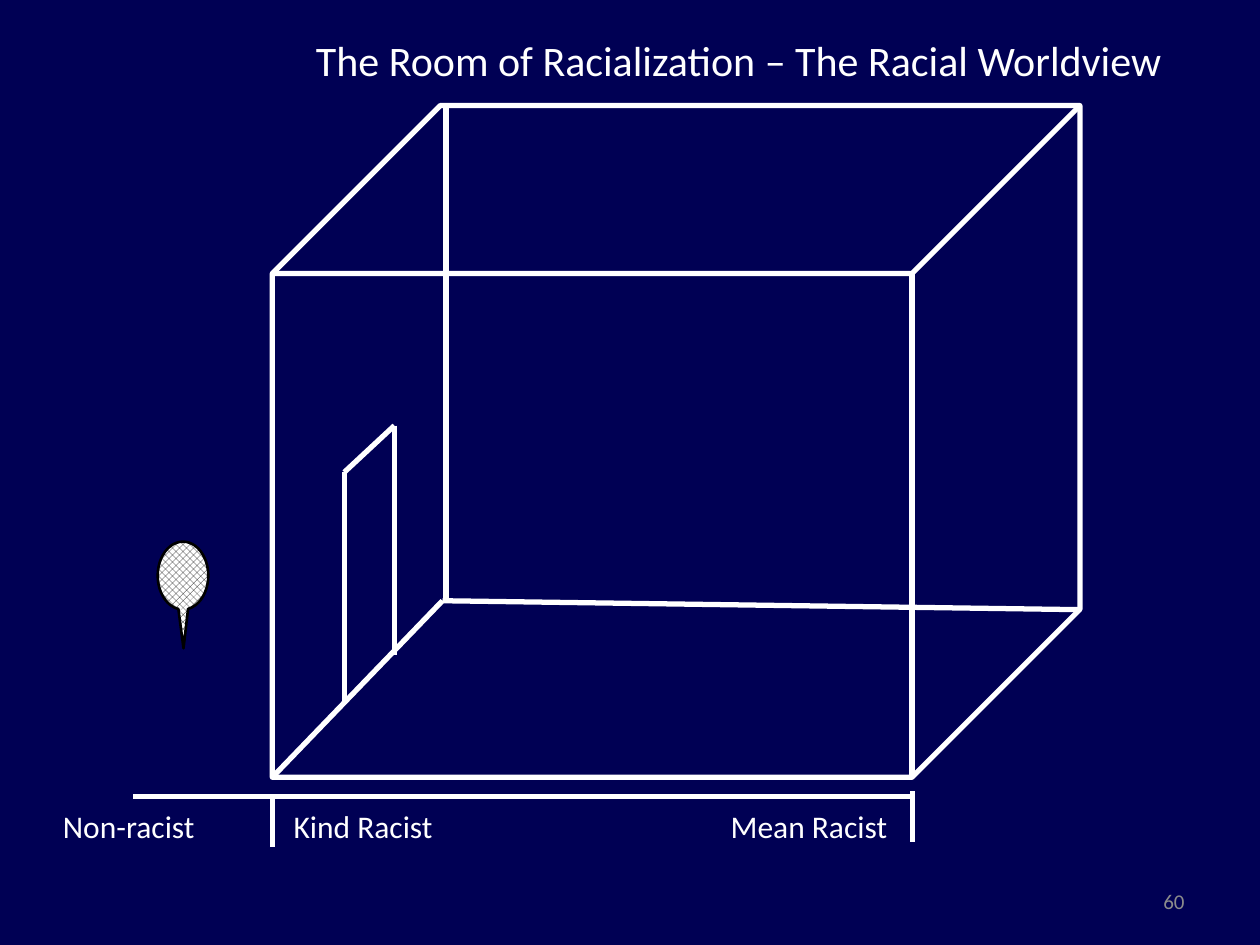
from dataclasses import dataclass

from lxml import etree
from pptx import Presentation
from pptx.dml.color import RGBColor
from pptx.enum.dml import MSO_PATTERN
from pptx.enum.shapes import MSO_CONNECTOR, MSO_SHAPE
from pptx.enum.text import MSO_ANCHOR, PP_ALIGN
from pptx.oxml.ns import qn
from pptx.util import Cm, Pt

CUBE = MSO_SHAPE.CUBE
BALLOON = MSO_SHAPE.OVAL_CALLOUT
STRAIGHT = MSO_CONNECTOR.STRAIGHT
CHECK = MSO_PATTERN.LARGE_CHECKER_BOARD
LEFT, RIGHT = PP_ALIGN.LEFT, PP_ALIGN.RIGHT
TOP, MIDDLE = MSO_ANCHOR.TOP, MSO_ANCHOR.MIDDLE


@dataclass(frozen=True)
class Theme:
    font: str = "Calibri"
    back: RGBColor = RGBColor(0x00, 0x00, 0x54)
    white: RGBColor = RGBColor(0xFF, 0xFF, 0xFF)
    black: RGBColor = RGBColor(0x00, 0x00, 0x00)
    grey: RGBColor = RGBColor(0x8C, 0x8C, 0x8C)
    title: int = 24
    label: int = 18
    small: int = 12
    edge: float = 3
    thin: float = 1.5


THEME = Theme()


def add_line(slide, box, start, end):
    """Draw a white edge between two points given relative to the box."""
    left, top = box[:2]
    line = slide.shapes.add_connector(
        STRAIGHT, Cm(left + start[0]), Cm(top + start[1]),
        Cm(left + end[0]), Cm(top + end[1]))
    line.line.color.rgb = THEME.white
    line.line.width = Pt(THEME.edge)
    etree.SubElement(line._element.spPr, qn("a:effectLst"))


def add_text(slide, box, text, size, color, align=LEFT, anchor=TOP, tabs=()):
    frame = slide.shapes.add_textbox(*map(Cm, box)).text_frame
    frame.word_wrap = True
    frame.vertical_anchor = anchor
    frame.text = text
    para = frame.paragraphs[0]
    para.alignment = align
    if tabs:
        stops = etree.SubElement(para._p.get_or_add_pPr(), qn("a:tabLst"))
        for tab in tabs:
            etree.SubElement(stops, qn("a:tab"), pos=str(Cm(tab)), algn="l")
    for run in para.runs:
        run.font.name = THEME.font
        run.font.size = Pt(size)
        run.font.color.rgb = color


def add_room(slide, box):
    cube = slide.shapes.add_shape(CUBE, *map(Cm, box))
    cube.shadow.inherit = False
    cube.fill.background()
    cube.line.color.rgb = THEME.white
    cube.line.width = Pt(THEME.edge)

    # Hidden edges
    wide, high = box[2:]
    corner = (3.43, 9.98)
    add_line(slide, box, (3.5, 0), (3.5, corner[1]))
    add_line(slide, box, (wide, 10.16), corner)
    add_line(slide, box, corner, (0, high))

    # Door in the left wall
    near, far, tall = (1.45, 7.39), (2.46, 6.45), 4.62
    for x, y in (near, far):
        add_line(slide, box, (x, y), (x, y + tall))
    add_line(slide, box, far, near)


def add_scale(slide, box):
    wide, tick = box[2], 1.02
    add_line(slide, box, (wide, 0), (1.67, 0))
    for x, y in ((4.47, 0), (wide, -0.1)):
        add_line(slide, box, (x, y), (x, y + tick))
    left, top, wide, high = box
    add_text(slide, (left, top + 0.1, wide, high),
             "Non-racist\tKind Racist\tMean Racist",
             THEME.label, THEME.white, tabs=(4.65, 13.46))


def add_balloon(slide, box):
    shape = slide.shapes.add_shape(BALLOON, *map(Cm, box))
    shape.adjustments[0] = 0.01
    shape.adjustments[1] = 1.07
    shape.shadow.inherit = False
    shape.fill.patterned()
    shape.fill.pattern = CHECK
    shape.fill.fore_color.rgb = THEME.black
    shape.fill.back_color.rgb = THEME.white
    shape.line.color.rgb = THEME.black
    shape.line.width = Pt(THEME.thin)


def main():
    prs = Presentation()
    prs.slide_width, prs.slide_height = Cm(25.4), Cm(19.05)
    slide = prs.slides.add_slide(prs.slide_layouts[6])
    slide.background.fill.solid()
    slide.background.fill.fore_color.rgb = THEME.back

    add_room(slide, (5.49, 2.13, 16.28, 13.54))
    add_scale(slide, (1.02, 16.05, 17.37, 1.02))
    add_balloon(slide, (3.18, 10.92, 1.02, 1.37))

    # Title and slide number
    add_text(slide, (6.12, 0.58, 18.29, 2.31),
             "The Room of Racialization – The Racial Worldview",
             THEME.title, THEME.white)
    add_text(slide, (18.21, 17.65, 5.92, 1.02), "60",
             THEME.small, THEME.grey, RIGHT, MIDDLE)

    prs.save("out.pptx")


if __name__ == "__main__":
    main()
